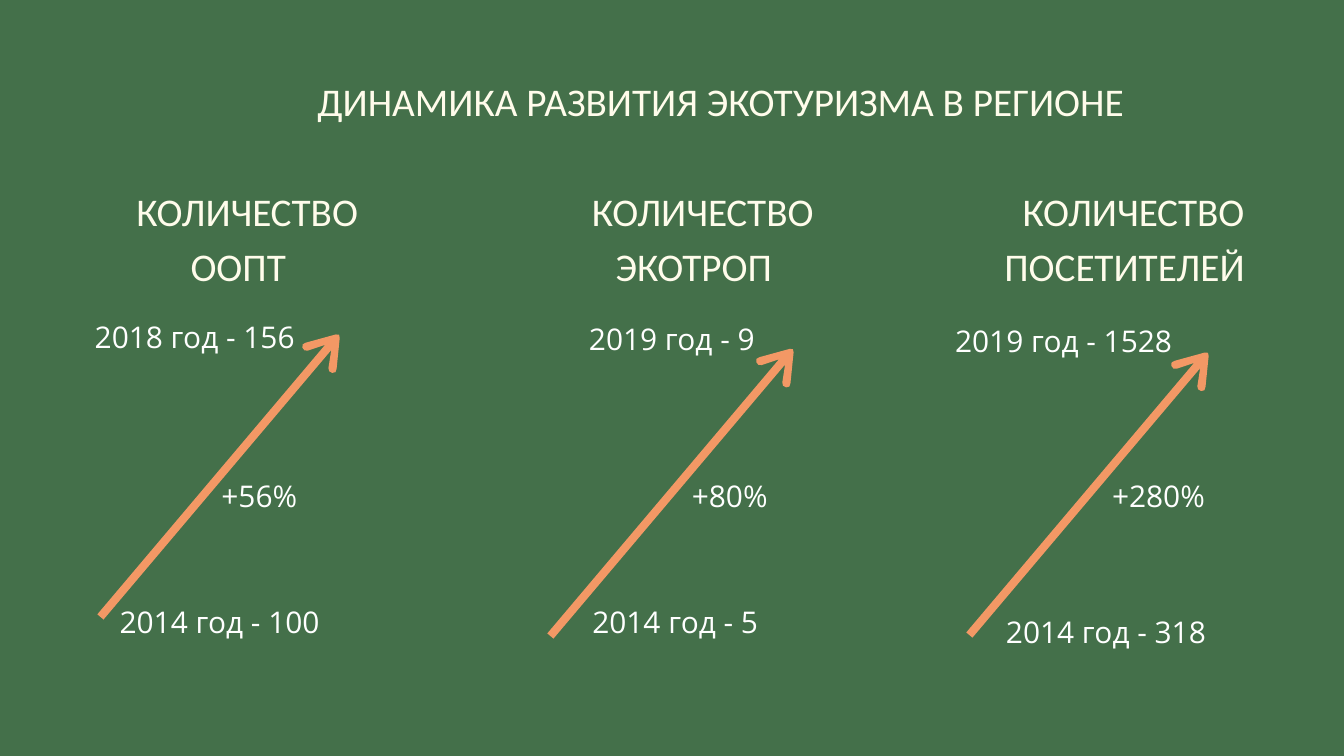
import pptx
import pptx.util
import pptx.dml.color
import pptx.enum.text

Inches = pptx.util.Inches
Pt = pptx.util.Pt
ALIGN = pptx.enum.text.PP_ALIGN
COLORS = {"background": "44704A", "heading": "FFFCEB", "value": "FFFFFF", "arrow": "F39865"}


def rgb(name):
    return pptx.dml.color.RGBColor.from_string(COLORS[name])


def add_text(left, top, width, height, lines, size, font, color):
    """Add a text box; lines is a list of (text, alignment)."""
    frame = slide.shapes.add_textbox(
        Inches(left), Inches(top), Inches(width), Inches(height)).text_frame
    frame.word_wrap = True
    frame.auto_size = pptx.enum.text.MSO_AUTO_SIZE.SHAPE_TO_FIT_TEXT
    frame.margin_left = frame.margin_right = frame.margin_top = frame.margin_bottom = 0
    for index, (text, alignment) in enumerate(lines):
        paragraph = frame.add_paragraph() if index else frame.paragraphs[0]
        paragraph.text = text
        paragraph.alignment = alignment
        paragraph.line_spacing = Pt(size * 1.4)
        paragraph.font.size = Pt(size)
        paragraph.font.name = font
        paragraph.font.color.rgb = rgb(color)


presentation = pptx.Presentation()
presentation.slide_width = Inches(20)
presentation.slide_height = Inches(11.25)
slide = presentation.slides.add_slide(presentation.slide_layouts[6])
slide.background.fill.solid()
slide.background.fill.fore_color.rgb = rgb("background")

# Title
add_text(3.27, 1.03, 13.46, 0.79,
         [("ДИНАМИКА РАЗВИТИЯ ЭКОТУРИЗМА В РЕГИОНЕ", ALIGN.RIGHT)], 42, "Calibri", "heading")

# Each indicator: subject, heading left, arrow (left, top, length), labels (text, left, top)
indicators = [
    ("ООПТ", 1.63, (0.52, 6.76, 5.5),
     [("2014 год - 100", 1.63, 8.89), ("2018 год - 156", 1.26, 4.66), ("+56%", 2.22, 7.02)]),
    ("ЭКОТРОП", 8.41, (7.2, 7.01, 5.59),
     [("2014 год - 5", 8.41, 8.89), ("2019 год - 9", 8.36, 4.69), ("+80%", 9.22, 7.02)]),
    ("ПОСЕТИТЕЛЕЙ", 14.82, (13.45, 7.03, 5.5),
     [("2014 год - 318", 14.82, 9.05), ("2019 год - 1528", 14.19, 4.72), ("+280%", 15.6, 7.02)]),
]

# Upper half of the arrowhead: distance back from the tip, distance from the axis
half_head = [(0.25, 0.06), (0.48, 0.2), (0.51, 0.24), (0.5, 0.29),
             (0.46, 0.32), (0.41, 0.3), (0.03, 0.04)]

for subject, heading_left, (left, top, length), labels in indicators:
    # Growth arrow, drawn level and then turned upwards
    tip, axis = left + length, top + 0.32
    half = [(length, 0.06)] + half_head
    outline = [(tip - back, axis - off) for back, off in half]
    outline.append((tip, axis))
    outline += [(tip - back, axis + off) for back, off in reversed(half)]
    points = [(Inches(x), Inches(y)) for x, y in outline]
    builder = slide.shapes.build_freeform(*points[0])
    builder.add_line_segments(points[1:], close=True)
    arrow = builder.convert_to_shape()
    arrow.rotation = 310.2
    arrow.shadow.inherit = False
    arrow.fill.solid()
    arrow.fill.fore_color.rgb = rgb("arrow")
    arrow.line.fill.background()

    # Heading and values
    add_text(heading_left, 2.67, 3.83, 1.61,
             [("КОЛИЧЕСТВО ", ALIGN.RIGHT), (subject, ALIGN.CENTER)], 42, "Calibri", "heading")
    for text, label_left, label_top in labels:
        add_text(label_left, label_top, 3.28, 0.6,
                 [(text, ALIGN.CENTER)], 32, "Open Sans", "value")

presentation.save("out.pptx")
